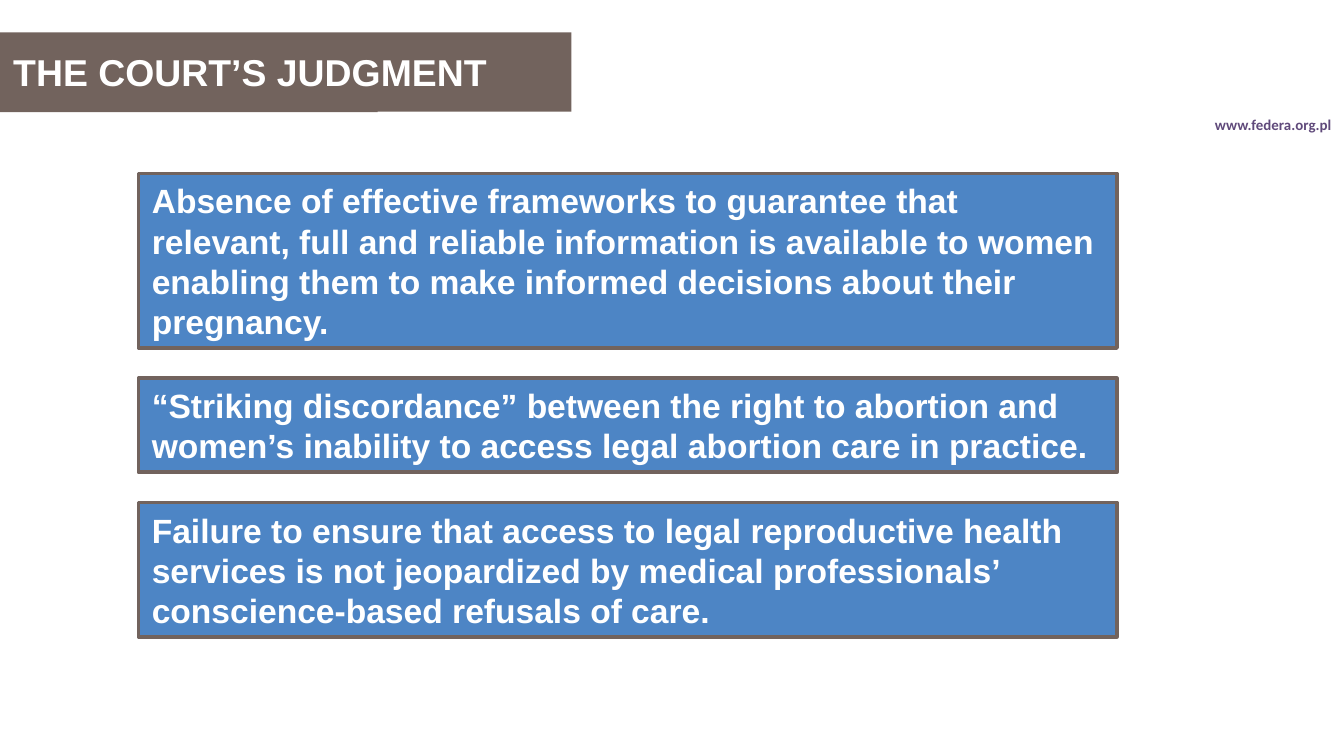
from pptx import Presentation
from pptx.dml.color import RGBColor
from pptx.enum.shapes import MSO_SHAPE
from pptx.enum.text import MSO_ANCHOR, MSO_AUTO_SIZE, PP_ALIGN
from pptx.util import Cm, Pt

BROWN, BLUE, PURPLE, WHITE = "72635D", "4D85C5", "604A7B", "FFFFFF"
LINE_HEIGHT, PADDING, GAP = 0.76, 0.26, 0.57

# Each finding with the number of lines it fills
FINDINGS = [
    ("Absence of effective frameworks to guarantee that relevant, full and "
     "reliable information is available to women enabling them to make "
     "informed decisions about their pregnancy.", 4),
    ("“Striking discordance” between the right to abortion and women’s "
     "inability to access legal abortion care in practice.", 2),
    ("Failure to ensure that access to legal reproductive health services is "
     "not jeopardized by medical professionals’ conscience-based refusals "
     "of care.", 3),
]


def color(value):
    return RGBColor.from_string(value)


def paint(shape, fill, line=None):
    shape.fill.solid()
    shape.fill.fore_color.rgb = color(fill)
    if line:
        shape.line.color.rgb = color(line)
        shape.line.width = Pt(2)
    else:
        shape.line.fill.background()


def write(shape, text, size=18, font="Arial", ink=WHITE,
          anchor=MSO_ANCHOR.TOP, wrap=True):
    frame = shape.text_frame
    frame.word_wrap = wrap
    frame.auto_size = MSO_AUTO_SIZE.NONE
    frame.vertical_anchor = anchor
    frame.margin_left = frame.margin_right = Cm(0.25)
    frame.margin_top = frame.margin_bottom = Cm(0.13)
    para = frame.paragraphs[0]
    para.alignment = PP_ALIGN.LEFT
    span = para.add_run()
    span.text = text
    span.font.size = Pt(size)
    span.font.name = font
    span.font.bold = True
    span.font.color.rgb = color(ink)


def add_box(page, left, top, width, height, fill, line=None):
    box = page.shapes.add_shape(
        MSO_SHAPE.RECTANGLE, Cm(left), Cm(top), Cm(width), Cm(height))
    box.shadow.inherit = False
    paint(box, fill, line)
    return box


def add_heading(page, left, top, width, height):
    title = page.shapes.title
    title.left, title.top = Cm(left), Cm(top)
    title.width, title.height = Cm(width), Cm(height)
    paint(title, BROWN)
    write(title, "THE COURT’S JUDGMENT", size=20, anchor=MSO_ANCHOR.MIDDLE)
    # Lower strip, kept behind the title
    strip = add_box(page, left, top + 0.18, 7.14, 1.33, BROWN)
    title.element.addprevious(strip.element)


def add_address(page, left, top, width, height):
    box = page.shapes.add_textbox(Cm(left), Cm(top), Cm(width), Cm(height))
    write(box, "www.federa.org.pl", size=8, font="Calibri", ink=PURPLE,
          wrap=False)


def add_findings(page, left, top, width):
    for text, lines in FINDINGS:
        height = lines * LINE_HEIGHT + PADDING
        write(add_box(page, left, top, width, height, BLUE, BROWN), text)
        top += height + GAP


def main():
    deck = Presentation()
    deck.slide_width, deck.slide_height = Cm(25.4), Cm(14.29)
    page = deck.slides.add_slide(deck.slide_layouts[5])
    add_heading(page, 0, 0.61, 10.8, 1.5)
    add_address(page, 22.71, 2.06, 2.77, 0.61)
    add_findings(page, 2.62, 3.28, 18.49)
    deck.save("out.pptx")


if __name__ == "__main__":
    main()
